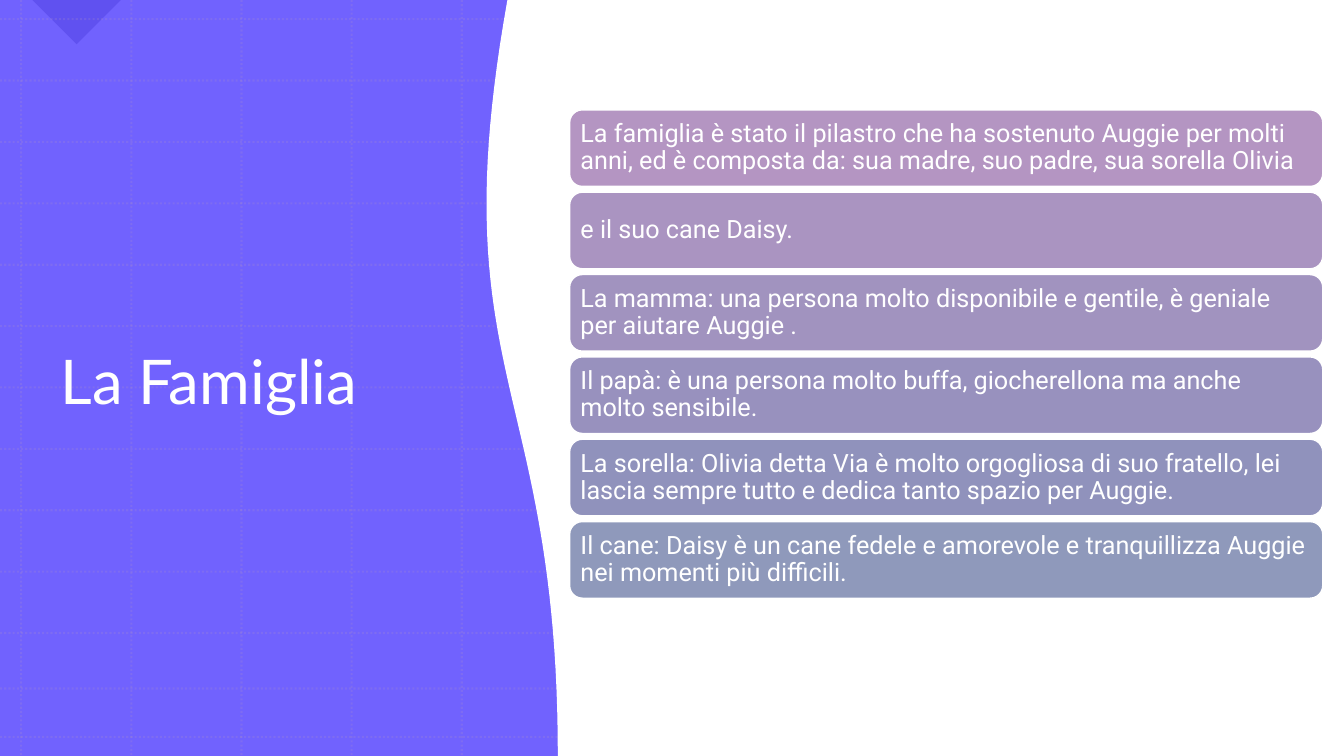
from lxml.etree import SubElement
from pptx import Presentation
from pptx.dml.color import RGBColor
from pptx.enum.dml import MSO_LINE
from pptx.enum.shapes import MSO_CONNECTOR, MSO_SHAPE
from pptx.enum.text import MSO_ANCHOR, PP_ALIGN
from pptx.oxml.ns import qn
from pptx.util import Inches, Pt

TITLE = "La Famiglia"
CARDS = [
    ("B495C2", "La famiglia è stato il pilastro che ha sostenuto Auggie per molti anni, "
               "ed è composta da: sua madre, suo padre, sua sorella Olivia"),
    ("AA94C1", "e il suo cane Daisy."),
    ("A193BF", "La mamma: una persona molto disponibile e gentile, è geniale per aiutare Auggie ."),
    ("9891BE", "Il papà: è una persona molto buffa, giocherellona ma anche molto sensibile."),
    ("9092BC", "La sorella: Olivia detta Via è molto orgogliosa di suo fratello, lei lascia "
               "sempre tutto e dedica tanto spazio per Auggie."),
    ("8F99BB", "Il cane: Daisy è un cane fedele e amorevole e tranquillizza Auggie nei momenti "
               "più difficili."),
]
WHITE, PURPLE, INDIGO, MAUVE = "FFFFFF", "7162FE", "1201AF", "B495C2"
WIDTH, HEIGHT = 13.33, 7.5
GRID_COLUMNS = [0.21 + 1.0925 * i for i in range(5)]
GRID_ROWS = [0.19 + 0.609 * i for i in range(11)] + [6.83, 7.31]
CARD_LEFT, CARD_TOP, CARD_WIDTH, CARD_HEIGHT, CARD_STEP = 5.65, 1.09, 7.47, 0.76, 0.817
WAVE = [(5.54, 7.5), (5.54, 3.76), (4.37, 3.74), (5.04, 0)]
WAVE_STEPS = 48

prs = Presentation()
prs.slide_width, prs.slide_height = Inches(WIDTH), Inches(HEIGHT)
slide = prs.slides.add_slide(prs.slide_layouts[5])
shapes = slide.shapes


def paint(color_format, hex_color, opacity=100):
    color_format.rgb = RGBColor.from_string(hex_color)
    if opacity < 100:
        for color in color_format._xFill.iter(qn("a:srgbClr")):
            SubElement(color, qn("a:alpha"), val=str(opacity * 1000))


def fill_shape(shape, hex_color, opacity=100, outline=None):
    shape.shadow.inherit = False
    shape.fill.solid()
    shape.fill.fore_color.rgb = RGBColor.from_string(hex_color)
    if opacity < 100:
        color = shape._element.spPr.find(qn("a:solidFill")).find(qn("a:srgbClr"))
        SubElement(color, qn("a:alpha"), val=str(opacity * 1000))
    if outline:
        shape.line.color.rgb = RGBColor.from_string(outline)
        shape.line.width = Pt(1)
    else:
        shape.line.fill.background()


def add_block(kind, left, top, width, height, hex_color, **look):
    block = shapes.add_shape(kind, *map(Inches, (left, top, width, height)))
    fill_shape(block, hex_color, **look)
    return block


def write(frame, text, margin, font_name, size, line_spacing=0.9):
    frame.text = text
    paragraph = frame.paragraphs[0]
    frame_format = {"word_wrap": True, "vertical_anchor": MSO_ANCHOR.MIDDLE}
    frame_format |= {f"margin_{side}": Inches(margin) for side in ("left", "top", "right", "bottom")}
    formats = [
        (frame, frame_format),
        (paragraph, {"alignment": PP_ALIGN.LEFT, "line_spacing": line_spacing}),
        (paragraph.runs[0].font, {"name": font_name, "size": Pt(size)}),
    ]
    for target, values in formats:
        for key, value in values.items():
            setattr(target, key, value)
    paragraph.runs[0].font.color.rgb = RGBColor.from_string(WHITE)


def add_grid_line(grid, x1, y1, x2, y2):
    line = grid.shapes.add_connector(MSO_CONNECTOR.STRAIGHT, *map(Inches, (x1, y1, x2, y2)))
    line.line.width = Pt(1.5)
    line.line.color.rgb = RGBColor.from_string(MAUVE)
    line.line.dash_style = MSO_LINE.ROUND_DOT
    properties = line._element.spPr
    for color in properties.iter(qn("a:srgbClr")):
        SubElement(color, qn("a:alpha"), val="20000")
    SubElement(properties, qn("a:effectLst"))


def bezier(points, t):
    weights = ((1 - t) ** 3, 3 * t * (1 - t) ** 2, 3 * t ** 2 * (1 - t), t ** 3)
    return tuple(Inches(sum(w * p[axis] for w, p in zip(weights, points))) for axis in (0, 1))


# Purple ground with its corner triangle
add_block(MSO_SHAPE.RECTANGLE, 0, 0, WIDTH, HEIGHT, PURPLE)
corner = add_block(MSO_SHAPE.RIGHT_TRIANGLE, 0.45, -0.31, 0.62, 0.62, INDIGO, opacity=17)
corner.rotation = 315

# Dotted grid
grid = shapes.add_group_shape()
for x in GRID_COLUMNS:
    add_grid_line(grid, x, 0, x, HEIGHT)
for y in GRID_ROWS:
    add_grid_line(grid, 0, y, WIDTH, y)

# Title, raised above the ground
title = shapes.title
title.left, title.top, title.width, title.height = map(Inches, (0.5, 0.79, 4.08, 6.05))
write(title.text_frame, TITLE, 0.1, "Lato", 44)
shapes._spTree.append(title._element)

# White area with a wavy left edge
edge = [bezier(WAVE, step / WAVE_STEPS) for step in range(WAVE_STEPS + 1)]
outline = shapes.build_freeform(Inches(WIDTH), Inches(HEIGHT))
outline.add_line_segments(edge + [(Inches(WIDTH), 0)], close=True)
fill_shape(outline.convert_to_shape(), WHITE, outline=WHITE)

# Family cards
for row, (color, text) in enumerate(CARDS):
    card = add_block(MSO_SHAPE.ROUNDED_RECTANGLE, CARD_LEFT, CARD_TOP + row * CARD_STEP,
                     CARD_WIDTH, CARD_HEIGHT, color, outline=WHITE)
    write(card.text_frame, text, 0.07, "Roboto", 18)

prs.save("out.pptx")
